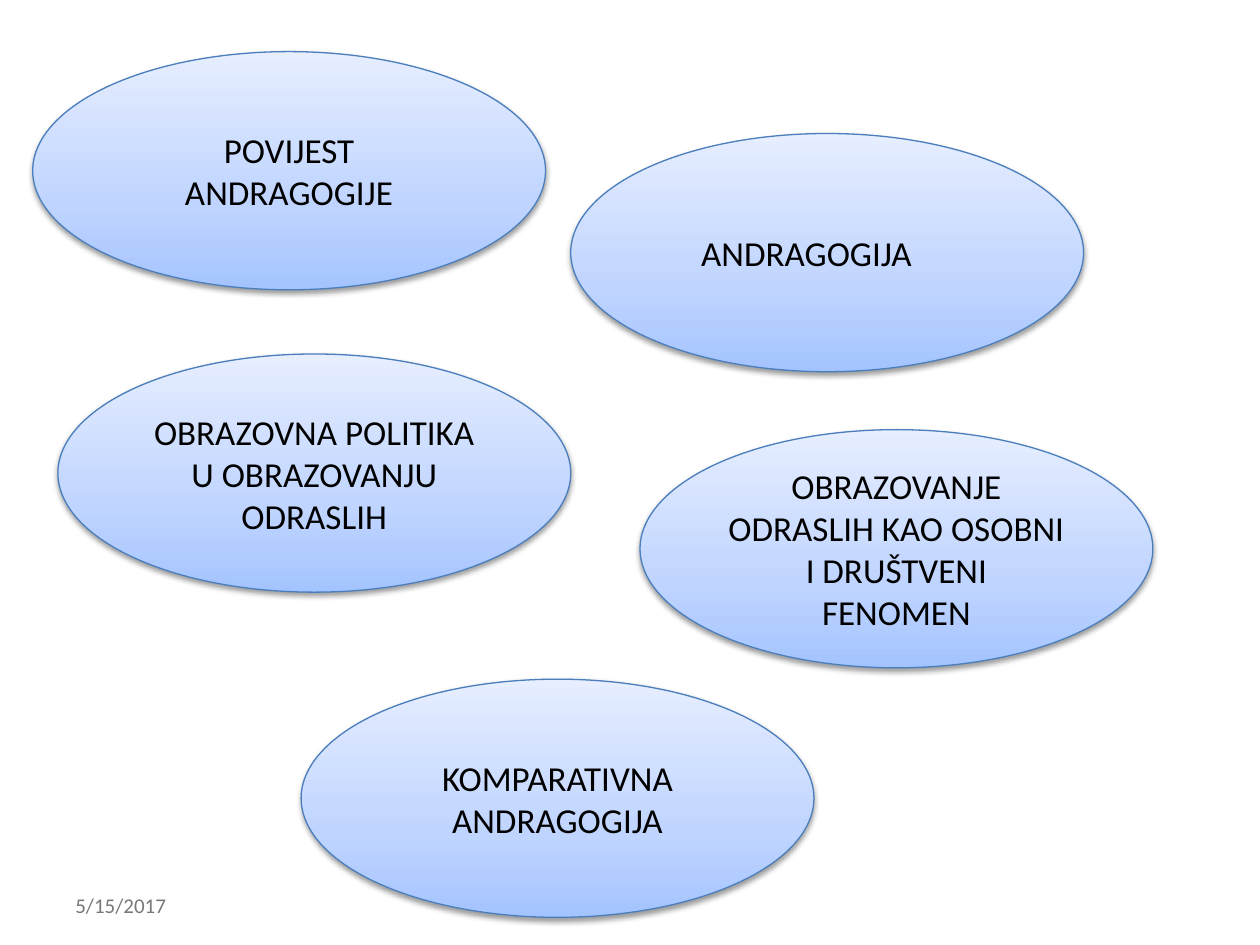
import copy

import lxml.etree
import pptx
import pptx.dml.color
import pptx.enum.shapes
import pptx.enum.text
import pptx.oxml
import pptx.oxml.ns
import pptx.util
from pptx.util import Inches

TOPIC_WIDTH, TOPIC_HEIGHT = 4.07, 1.89
TOPICS = [
    ("POVIJEST ANDRAGOGIJE", 0.26, 0.41),
    ("ANDRAGOGIJA\t", 4.53, 1.06),
    ("OBRAZOVNA POLITIKA U OBRAZOVANJU ODRASLIH", 0.46, 2.81),
    ("OBRAZOVANJE ODRASLIH KAO OSOBNI I DRUŠTVENI FENOMEN", 5.08, 3.41),
    ("KOMPARATIVNA ANDRAGOGIJA", 2.39, 5.39),
]


def color(value):
    return pptx.dml.color.RGBColor.from_string(value)


class SlideStyle:
    font = "Calibri"
    ink = "000000"
    muted = "777877"
    outline = "4B7EBC"
    gradient = [(0, "A4C4FF"), (0.35, "BFD4FF"), (1, "E6EEFF")]

    def __init__(self, slide):
        self.slide = slide

    def set_wording(self, shape, wording, size, ink, align):
        frame = shape.text_frame
        frame.word_wrap = True
        frame.vertical_anchor = pptx.enum.text.MSO_ANCHOR.MIDDLE
        frame.text = wording
        paragraph = frame.paragraphs[0]
        paragraph.alignment = align
        for run in paragraph.runs:
            run.font.name = self.font
            run.font.size = pptx.util.Pt(size)
            run.font.color.rgb = color(ink)

    def shade(self, shape):
        shape.fill.gradient()
        shape.fill.gradient_angle = 90
        stop_list = shape._element.spPr.find(".//" + pptx.oxml.ns.qn("a:gsLst"))
        stop_list.append(copy.deepcopy(stop_list[-1]))
        for stop, (position, tint) in zip(shape.fill.gradient_stops, self.gradient):
            stop.position = position
            stop.color.rgb = color(tint)

    def cast_shadow(self, shape):
        shape.shadow.inherit = False
        effects = shape._element.spPr.find(pptx.oxml.ns.qn("a:effectLst"))
        shadow = lxml.etree.SubElement(
            effects, pptx.oxml.ns.qn("a:outerShdw"),
            blurRad=str(pptx.util.Pt(3.1)), dist=str(pptx.util.Pt(1.6)),
            dir="5400000", rotWithShape="0")
        tint = lxml.etree.SubElement(shadow, pptx.oxml.ns.qn("a:srgbClr"), val=self.ink)
        lxml.etree.SubElement(tint, pptx.oxml.ns.qn("a:alpha"), val="38000")

    def topic(self, wording, left, top):
        ellipse = self.slide.shapes.add_shape(
            pptx.enum.shapes.MSO_SHAPE.OVAL, Inches(left), Inches(top),
            Inches(TOPIC_WIDTH), Inches(TOPIC_HEIGHT))
        self.shade(ellipse)
        ellipse.line.color.rgb = color(self.outline)
        ellipse.line.width = pptx.util.Pt(0.75)
        self.cast_shadow(ellipse)
        self.set_wording(ellipse, wording, 20, self.ink, pptx.enum.text.PP_ALIGN.CENTER)

    def date(self, wording, left, top, width, height):
        box = self.slide.shapes.add_textbox(
            Inches(left), Inches(top), Inches(width), Inches(height))
        self.set_wording(box, wording, 12, self.muted, pptx.enum.text.PP_ALIGN.LEFT)


def main():
    presentation = pptx.Presentation()
    presentation.slide_width = Inches(10)
    presentation.slide_height = Inches(7.5)
    style = SlideStyle(presentation.slides.add_slide(presentation.slide_layouts[6]))
    style.date("5/15/2017", 0.5, 6.98, 2.33, 0.4)
    for wording, left, top in TOPICS:
        style.topic(wording, left, top)
    presentation.save("out.pptx")


if __name__ == "__main__":
    main()
